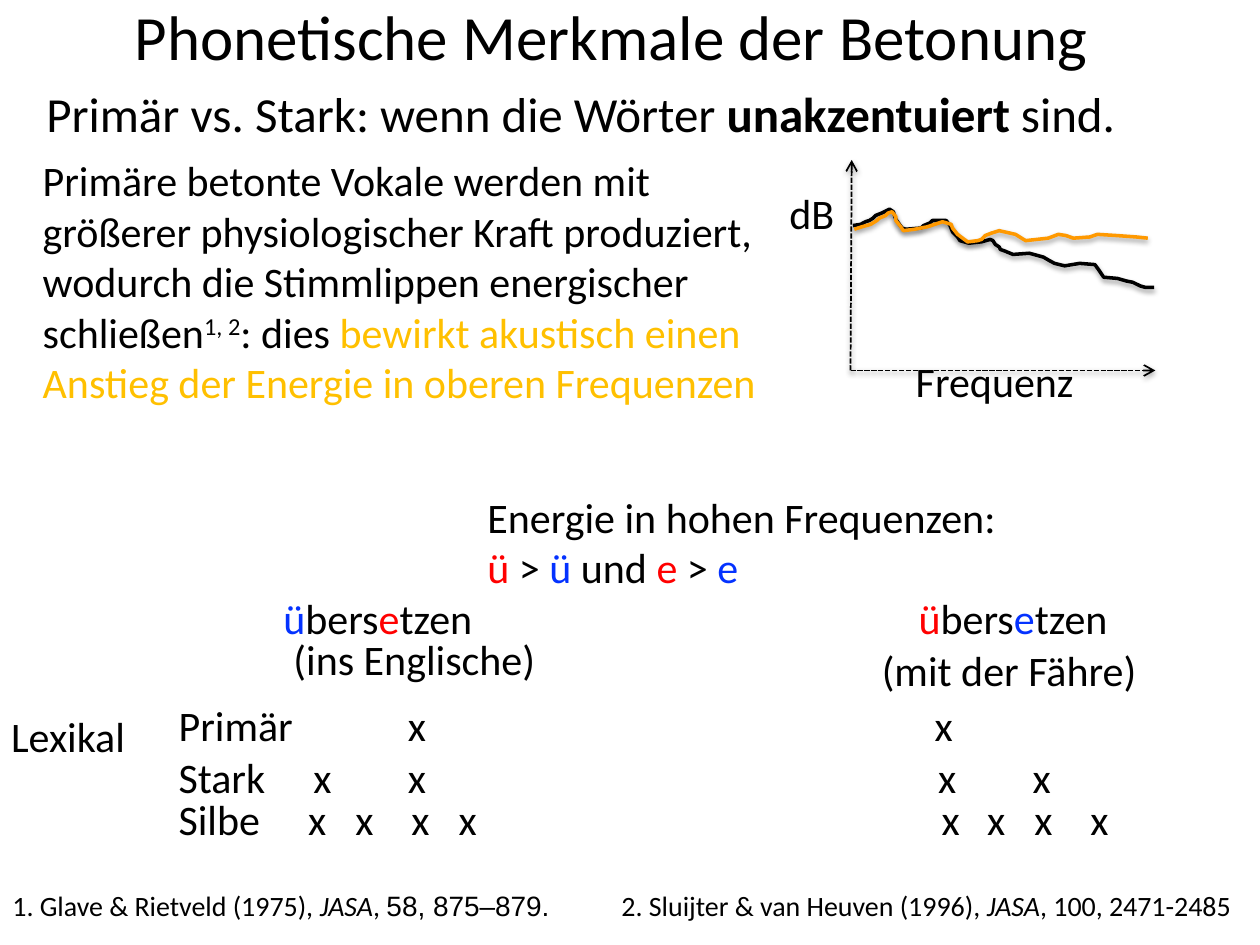
from lxml import etree
from pptx import Presentation
from pptx.dml.color import RGBColor
from pptx.enum import dml, shapes, text
from pptx.oxml import ns
from pptx.util import Pt

COLORS = {
    "black": "000000",
    "gold": "FFC000",
    "orange": "FF9900",
    "blue": "0432FF",
    "red": "FF0000",
}
STRONG = {"color": "red"}
WEAK = {"color": "blue"}
ITALIC = {"italic": True}

PRIMARY_CURVE = [
    (488.2, 131), (492.5, 129.6), (497.5, 128.2), (501.1, 126), (502.6, 124.6),
    (506.2, 123.1), (507.6, 121.7), (509.8, 121), (511.9, 123.8), (511.9, 126),
    (514.8, 129.6), (516.2, 131.8), (522.7, 131), (529.9, 129.6), (538.6, 126.7),
    (543.6, 128.2), (544.3, 130.3), (547.2, 133.9), (553, 138.2), (558.7, 137.5),
    (560.9, 136.8), (563, 134.6), (566.6, 133.2), (571, 131.8), (580.3, 133.9),
    (586.1, 137.5), (599, 136.1), (604.8, 133.9), (609.1, 134.6), (613.4, 136.1),
    (622.8, 135.4), (627.1, 133.9), (637.9, 134.6), (649.4, 135.4), (655.9, 136.1),
]
STRONG_CURVE = [
    (487.4, 128.9), (491.8, 128.2), (494.6, 126.7), (496.8, 126), (499, 124.6),
    (500.4, 123.1), (504, 121.7), (508.3, 119.5), (510.5, 121), (511.9, 125.3),
    (515.5, 130.3), (517.7, 131), (526.3, 130.3), (527.8, 128.9), (531.4, 127.4),
    (532.8, 126), (540.7, 126), (542.9, 128.9), (544.3, 132.5), (547.2, 135.4),
    (548.6, 137.5), (553.7, 139), (560.9, 138.2), (565.9, 136.8), (567.4, 137.5),
    (568.8, 139.7), (571, 141.1), (571.7, 142.6), (573.8, 143.3), (578.9, 145.4),
    (588.2, 144.7), (596.2, 146.9), (599.8, 149), (602.6, 150.5), (608.4, 151.9),
    (617, 150.5), (625.7, 151.2), (627.8, 154.1), (630.7, 158.4), (638.6, 159.1),
    (643.7, 160.6), (647.3, 161.3), (651.6, 163.4), (654.5, 164.2), (659.5, 164.2),
]
GRID_ROWS = [
    ("Primär", 396, [131, 432]),
    ("Stark", 426, [77, 131, 434, 488]),
    ("Silbe", 450, [74, 101, 133, 160, 436, 462, 489, 521]),
]


def add_run(p, content, size=24, color="black", bold=False, italic=False,
            font="Calibri", baseline=0):
    r = p.add_run()
    r.text = content
    r.font.name = font
    r.font.size = Pt(size)
    r.font.bold = bold
    r.font.italic = italic
    r.font.color.rgb = RGBColor.from_string(COLORS[color])
    if baseline:
        r._r.get_or_add_rPr().set("baseline", str(baseline * 1000))


def add_tabs(p, stops):
    tabs = etree.SubElement(p._p.get_or_add_pPr(), ns.qn("a:tabLst"))
    for stop in stops:
        etree.SubElement(tabs, ns.qn("a:tab"), pos=str(Pt(stop)), algn="l")


def write(sp, *paragraphs, size=24, wrap=True, tabs=()):
    tf = sp.text_frame
    tf.word_wrap = wrap
    tf.auto_size = text.MSO_AUTO_SIZE.NONE
    tf.vertical_anchor = text.MSO_ANCHOR.TOP
    for i, runs in enumerate(paragraphs):
        p = tf.add_paragraph() if i else tf.paragraphs[0]
        p.alignment = text.PP_ALIGN.LEFT
        if tabs:
            add_tabs(p, tabs)
        for content, style in runs:
            add_run(p, content, **{"size": size, **style})


def add_text(s, box, *paragraphs, **fmt):
    write(s.shapes.add_textbox(*map(Pt, box)), *paragraphs, **fmt)


def add_label(s, box, content, **fmt):
    add_text(s, box, [(content, {})], **fmt)


def add_title(s, box, content):
    sp = s.shapes.title
    sp.left, sp.top, sp.width, sp.height = map(Pt, box)
    write(sp, [(content, {})], size=36, wrap=False)


def add_shadow(sp):
    effects = etree.SubElement(sp._element.spPr, ns.qn("a:effectLst"))
    shadow = etree.SubElement(effects, ns.qn("a:outerShdw"), blurRad=str(Pt(3.1)),
                              dist=str(Pt(1.6)), dir="5400000", rotWithShape="0")
    color = etree.SubElement(shadow, ns.qn("a:srgbClr"), val=COLORS["black"])
    etree.SubElement(color, ns.qn("a:alpha"), val="38000")


def format_line(sp, color, width):
    sp.line.color.rgb = RGBColor.from_string(COLORS[color])
    sp.line.width = Pt(width)


def add_axis(s, start, end):
    axis = s.shapes.add_connector(shapes.MSO_CONNECTOR.STRAIGHT, *map(Pt, start + end))
    format_line(axis, "black", 1)
    axis.line.dash_style = dml.MSO_LINE.SQUARE_DOT
    etree.SubElement(axis.line._get_or_add_ln(), ns.qn("a:tailEnd"), type="arrow")
    add_shadow(axis)


def add_curve(s, points, color):
    start, *rest = [(Pt(x), Pt(y)) for x, y in points]
    builder = s.shapes.build_freeform(*start)
    builder.add_line_segments(rest, close=False)
    curve = builder.convert_to_shape()
    curve.fill.background()
    format_line(curve, color, 2)
    add_shadow(curve)


def add_spectrum(s):
    origin = (486, 211.7)
    add_axis(s, origin, (486.7, 91.4))
    add_axis(s, origin, (660.2, 211.7))
    add_label(s, (444, 103.7, 42, 36.7), "dB")
    add_label(s, (516.2, 199.4, 120, 36.7), "Frequenz")
    add_curve(s, STRONG_CURVE, "black")
    add_curve(s, PRIMARY_CURVE, "orange")


def add_stress_grid(s):
    add_label(s, (-0.7, 402.5, 84.2, 36.7), "Lexikal")
    for name, top, stops in GRID_ROWS:
        add_label(s, (95, top, 620, 36), name + "\tx" * len(stops), tabs=stops)


def main():
    prs = Presentation()
    prs.slide_width, prs.slide_height = Pt(720), Pt(540)
    s = prs.slides.add_slide(prs.slide_layouts[5])

    add_title(s, (69.8, -5, 563.8, 51), "Phonetische Merkmale der Betonung")
    add_text(s, (19.4, 43.9, 680.4, 41), [
        ("Primär vs. Stark: wenn die Wörter ", {}),
        ("unakzentuiert", {"bold": True}),
        (" sind.", {}),
    ], size=28)
    add_text(s, (17.3, 85, 426.2, 152.6), [
        ("Primäre betonte Vokale werden mit größerer physiologischer Kraft "
         "produziert, wodurch die Stimmlippen energischer schließen", {}),
        ("1, 2", {"baseline": 30}),
        (": dies ", {}),
        ("bewirkt akustisch einen Anstieg der Energie in oberen Frequenzen",
         {"color": "gold"}),
    ])
    add_spectrum(s)

    add_text(s, (271.4, 277.2, 308.2, 65.5),
             [("Energie in hohen Frequenzen:", {})],
             [("ü", STRONG), (" > ", {}), ("ü", WEAK), (" und ", {}),
              ("e", STRONG), (" > ", {}), ("e", WEAK)],
             wrap=False)
    add_text(s, (154.8, 334.8, 498.2, 36.7), [
        ("ü", WEAK), ("bers", {}), ("e", STRONG), ("tzen\t", {}),
        ("ü", STRONG), ("bers", {}), ("e", WEAK), ("tzen", {}),
    ], tabs=[363])
    add_label(s, (160.6, 358.6, 162, 36.7), "(ins Englische)")
    add_label(s, (496.8, 365, 162, 36.7), "(mit der Fähre)")
    add_stress_grid(s)

    add_text(s, (0, 504, 348, 26.6), [
        ("1. Glave & Rietveld (1975), ", {}), ("JASA", ITALIC), (", ", {}),
        ("58, 875–879.", {"font": "Arial"}),
    ], size=16)
    add_text(s, (348, 504, 372, 26.6), [
        ("2. Sluijter & van Heuven (1996), ", {}), ("JASA", ITALIC),
        (", 100, 2471-2485", {}),
    ], size=16)
    prs.save("out.pptx")


if __name__ == "__main__":
    main()
